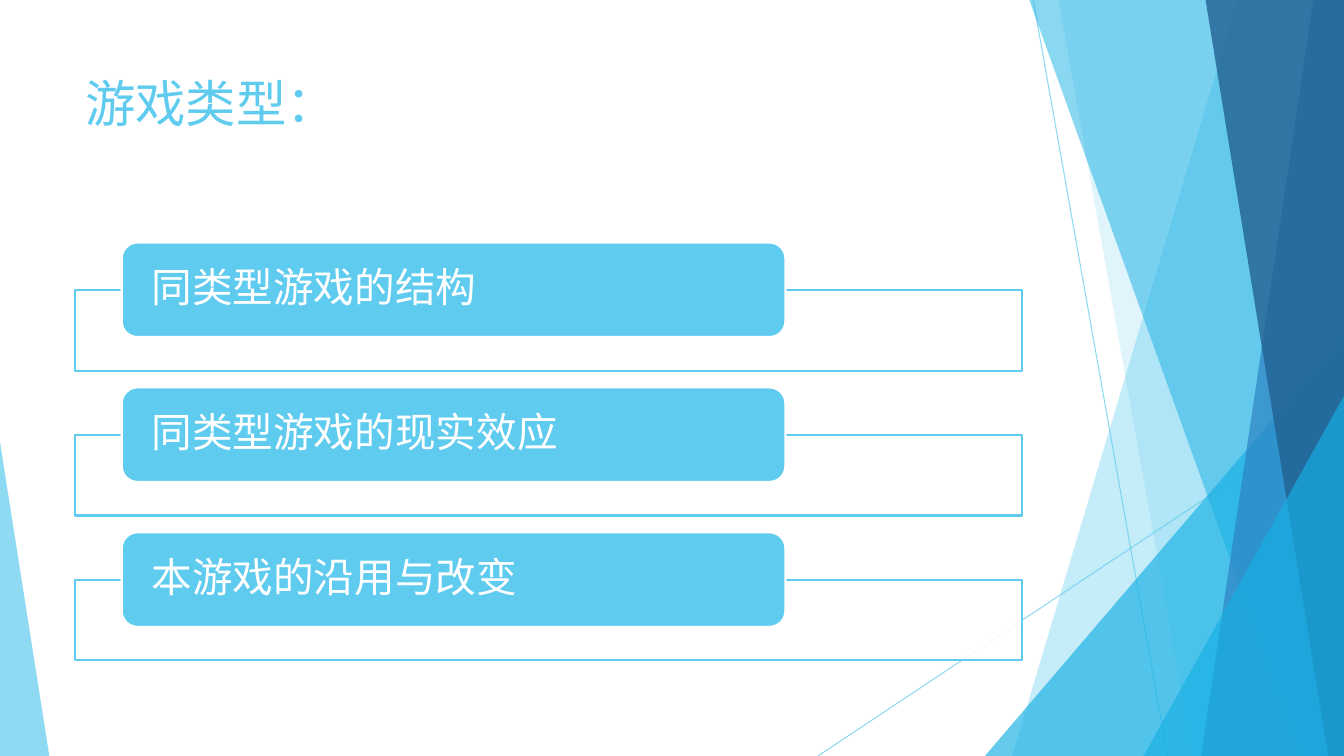
from dataclasses import dataclass
from pptx import Presentation
from pptx.dml.color import RGBColor as Rgb
from pptx.enum.shapes import MSO_CONNECTOR as Wire, MSO_SHAPE as Kind
from pptx.enum.text import MSO_ANCHOR as Anchor, PP_ALIGN as Align
from pptx.oxml.ns import qn
from pptx.util import Pt
from lxml.etree import SubElement as Sub

PX = 9525


@dataclass(frozen=True)
class Theme:
    sky: str = "5FCBEF"
    cyan: str = "17B0E4"
    blue: str = "2E83C3"
    navy: str = "226292"
    white: str = "FFFFFF"
    font: str = "Cabin"
    title: int = 36
    item: int = 29
    thin: float = 0.75
    edge: float = 1.5


THEME = Theme()


def px(*nums):
    return [n * PX for n in nums]


def fade(shape, alpha):
    for node in shape.element.iter(qn("a:srgbClr")):
        Sub(node, qn("a:alpha")).set("val", str(alpha * 1000))


def paint(shape, color, alpha=100):
    shape.shadow.inherit = False
    shape.fill.solid()
    shape.fill.fore_color.rgb = Rgb.from_string(color)
    if alpha < 100:
        fade(shape, alpha)
    shape.line.fill.background()


def border(shape, color, width):
    shape.line.color.rgb = Rgb.from_string(color)
    shape.line.width = Pt(width)


def write(shape, text, size, color, anchor, pad):
    frame = shape.text_frame
    frame.text = text
    frame.word_wrap = True
    frame.vertical_anchor = anchor
    frame.margin_left = frame.margin_right = pad * PX
    para = frame.paragraphs[0]
    para.alignment = Align.LEFT
    font = para.runs[0].font
    font.name = THEME.font
    font.size = Pt(size)
    font.color.rgb = Rgb.from_string(color)
    return frame, para


def ray(shapes, start, end):
    line = shapes.add_connector(Wire.STRAIGHT, *px(*start, *end))
    border(line, THEME.sky, THEME.thin)
    fade(line, 70)
    Sub(line.element.spPr, qn("a:effectLst"))


def shard(shapes, box, top, foot, color, alpha):
    left, head, wide, high = box
    right, base = left + wide, head + high
    pen = shapes.build_freeform(left + top, head - 1, scale=float(PX))
    pen.add_line_segments([(right, head - 1), (right, base), (left + foot, base)])
    paint(pen.convert_to_shape(), color, alpha)


def wedge(shapes, box, wide, high, tip, color, alpha):
    left = box[0] + (box[2] - wide) * tip
    top = box[1] + box[3] - high
    shape = shapes.add_shape(Kind.ISOSCELES_TRIANGLE, *px(left, top, wide, high))
    shape.adjustments[0] = tip
    paint(shape, color, alpha)


def facets(shapes, box):
    left, top, wide, high = box
    right, base = left + wide, top + high
    ray(shapes, (left + 984, top), (left + 1112, base))
    ray(shapes, (right, top + 387), (left + 779, base))
    shard(shapes, box, 1179, 964, THEME.sky, 36)
    shard(shapes, box, 1008, 1136, THEME.sky, 20)
    wedge(shapes, box, 342, 400, 1, THEME.cyan, 66)
    shard(shapes, box, 980, 1239, THEME.cyan, 50)
    shard(shapes, box, 1251, 1144, THEME.blue, 70)
    shard(shapes, box, 1148, 1265, THEME.navy, 80)
    wedge(shapes, box, 191, 343, 1, THEME.cyan, 66)
    wedge(shapes, box, 47, 299, 0, THEME.sky, 70)


def heading(shapes, box, text):
    area = shapes.add_textbox(*px(*box))
    write(area, text, THEME.title, THEME.sky, Anchor.TOP, 10)


def card(shapes, box, text):
    left, top, wide, high = box
    panel = shapes.add_shape(Kind.RECTANGLE, *px(left, top + 45, wide, high - 45))
    paint(panel, THEME.white, 90)
    border(panel, THEME.sky, THEME.edge)
    tab = shapes.add_shape(Kind.ROUNDED_RECTANGLE, *px(left + 45, top, 632, 90))
    paint(tab, THEME.sky)
    border(tab, THEME.white, THEME.edge)
    frame, para = write(tab, text, THEME.item, THEME.white, Anchor.MIDDLE, 24)
    frame.margin_top = frame.margin_bottom = 0
    para.line_spacing = 0.9


def cards(shapes, box, items):
    left, top, wide, high = box
    tall = 122
    step = (high - tall) // (len(items) - 1)
    for row, text in enumerate(items):
        card(shapes, (left, top + row * step, wide, tall), text)


def main():
    deck = Presentation()
    deck.slide_width, deck.slide_height = px(1280, 720)
    shapes = deck.slides.add_slide(deck.slide_layouts[6]).shapes
    facets(shapes, (0, 0, 1280, 720))
    heading(shapes, (71, 64, 902, 138), "游戏类型：")
    items = ["同类型游戏的结构", "同类型游戏的现实效应", "本游戏的沿用与改变"]
    cards(shapes, (71, 231, 902, 398), items)
    deck.save("out.pptx")


if __name__ == "__main__":
    main()
